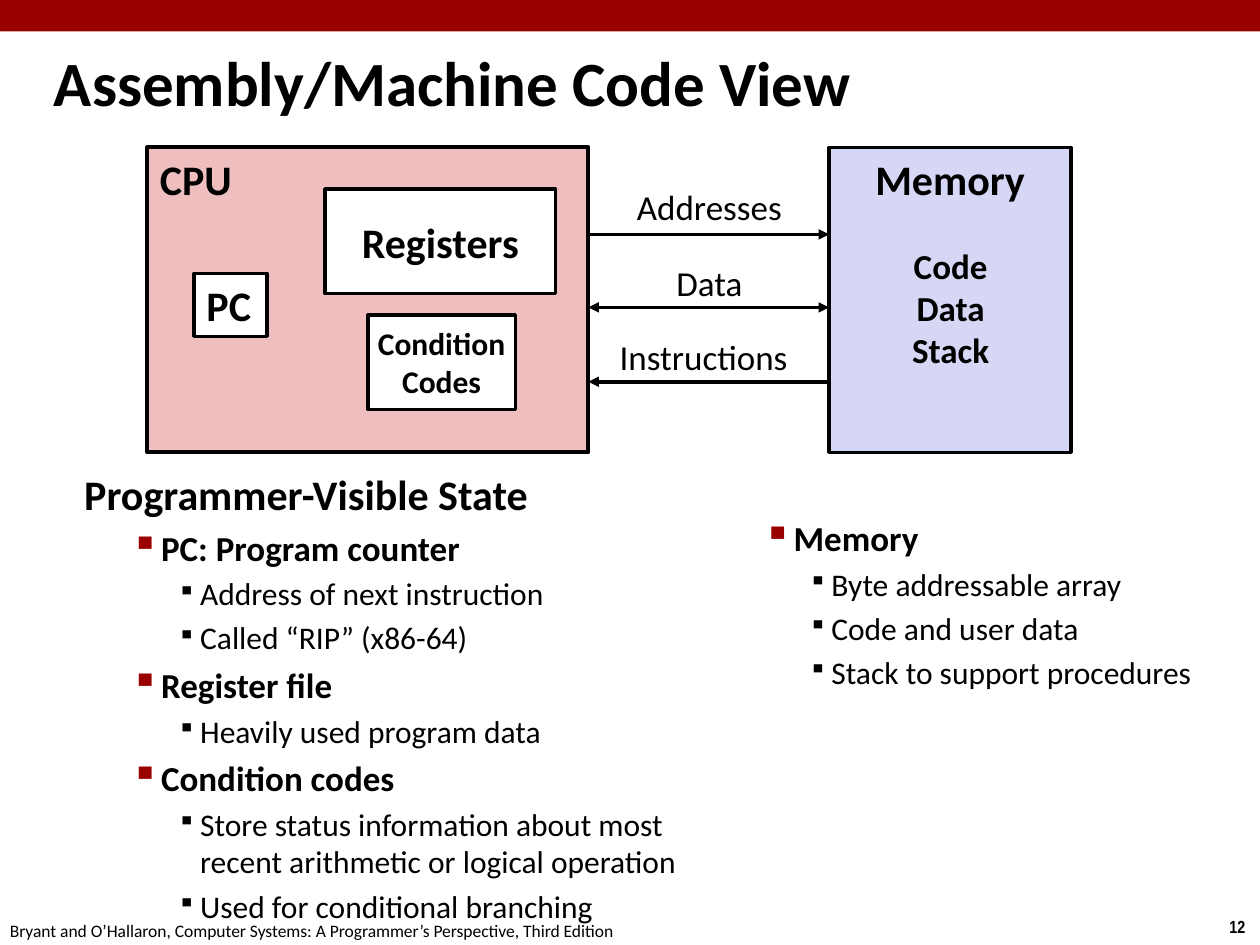
from dataclasses import dataclass
from typing import Optional

from lxml import etree
from pptx import Presentation
from pptx import util as u
from pptx.dml.color import RGBColor
from pptx.enum import shapes, text
from pptx.oxml import ns

BLACK, WHITE, RED = "000000", "FFFFFF", "990000"
LEFT, CENTER = text.PP_ALIGN.LEFT, text.PP_ALIGN.CENTER
TOP, MIDDLE = text.MSO_ANCHOR.TOP, text.MSO_ANCHOR.MIDDLE


@dataclass(frozen=True)
class Label:
    lines: tuple[str, ...]
    size: float
    bold: bool = False
    align: text.PP_ALIGN = CENTER
    anchor: text.MSO_ANCHOR = TOP
    wrap: bool = True
    font: str = "Calibri"


@dataclass(frozen=True)
class Block:
    place: tuple[float, float, float, float]
    label: Optional[Label] = None
    fill: Optional[str] = None
    line_width: float = 0


@dataclass(frozen=True)
class Signal:
    name: str
    y: float
    label_top: float
    label_width: float
    to_cpu: bool
    to_memory: bool


@dataclass(frozen=True)
class Level:
    size: float
    bold: bool
    hanging: float
    bullet_percent: int = 0
    bullet_color: str = BLACK


@dataclass(frozen=True)
class Outline:
    place: tuple[float, float, float, float]
    indents: tuple[float, float, float]
    items: tuple[tuple[int, str], ...]


LEVELS = (
    Level(24, True, 0.25),
    Level(20, True, 0.24, 110, RED),
    Level(18, False, 0.18, 80),
)
BLOCKS = (
    Block((0, 0, 10, 0.25), fill=RED),
    Block((9.66, 7.22, 0.34, 0.27), Label(("12",), 10, True, LEFT, wrap=False, font="Arial Narrow")),
    Block((-0.02, 7.25, 5.08, 0.27), Label(
        ("Bryant and O’Hallaron, Computer Systems: A Programmer’s Perspective, Third Edition",),
        10, align=LEFT, wrap=False)),
    Block((0.33, 0.33, 7.9, 0.63), Label(("Assembly/Machine Code View",), 36, True, LEFT, MIDDLE)),
    Block((1.17, 1.17, 3.5, 2.42), Label(("CPU",), 24, True, LEFT), "EFBFBF", 2.25),
    Block((1.54, 2.17, 0.58, 0.5), Label(("PC",), 24, True, LEFT, MIDDLE, False), WHITE, 2),
    Block((2.58, 1.5, 1.83, 0.83), Label(("Registers",), 24, True, CENTER, MIDDLE, False), WHITE, 2),
    Block((2.92, 2.5, 1.17, 0.75), Label(("Condition", "Codes"), 18, True, CENTER, MIDDLE, False), WHITE, 2),
    Block((6.58, 1.17, 1.92, 2.42), Label(("Memory",), 24, True, wrap=False), "D6D6F5", 2),
    Block((6.92, 1.89, 1.25, 1.11), Label(("Code", "Data", "Stack"), 20, True)),
)
SIGNALS = (
    Signal("Addresses", 1.86, 1.42, 1.92, False, True),
    Signal("Data", 2.44, 2.03, 1.92, True, True),
    Signal("Instructions", 3.03, 2.61, 1.83, True, False),
)
OUTLINES = (
    Outline((0.57, 3.67, 5.31, 3.38), (0.25, 0.61, 0.92), (
        (0, "Programmer-Visible State"),
        (1, "PC: Program counter"),
        (2, "Address of next instruction"),
        (2, "Called “RIP” (x86-64)"),
        (1, "Register file"),
        (2, "Heavily used program data"),
        (1, "Condition codes"),
        (2, "Store status information about most recent arithmetic or logical operation"),
        (2, "Used for conditional branching"),
    )),
    Outline((5.88, 4.05, 3.96, 1.72), (0.25, 0.32, 0.62), (
        (1, "Memory"),
        (2, "Byte addressable array"),
        (2, "Code and user data"),
        (2, "Stack to support procedures"),
    )),
)


def color(value: str) -> RGBColor:
    return RGBColor.from_string(value)


def set_all(target, values: dict) -> None:
    for name, value in values.items():
        setattr(target, name, value)


def add_span(para, words: str, size: float, bold: bool, font: str = "Calibri") -> None:
    span = para.add_run()
    span.text = words
    set_all(span.font, {"size": u.Pt(size), "bold": bold, "name": font})
    span.font.color.rgb = color(BLACK)


def next_para(frame, index: int):
    return frame.add_paragraph() if index else frame.paragraphs[0]


def add_block(page, block: Block):
    place = [u.Inches(length) for length in block.place]
    if block.fill:
        box = page.shapes.add_shape(shapes.MSO_SHAPE.RECTANGLE, *place)
        box.shadow.inherit = False
        box.fill.solid()
        box.fill.fore_color.rgb = color(block.fill)
        if block.line_width:
            box.line.color.rgb = color(BLACK)
            box.line.width = u.Pt(block.line_width)
        else:
            box.line.fill.background()
    else:
        box = page.shapes.add_textbox(*place)
    label = block.label
    if label:
        set_all(box.text_frame, {"word_wrap": label.wrap, "vertical_anchor": label.anchor})
        for index, words in enumerate(label.lines):
            para = next_para(box.text_frame, index)
            para.alignment = label.align
            add_span(para, words, label.size, label.bold, label.font)
    return box


def add_signal(page, signal: Signal) -> None:
    cpu_edge, memory_edge = 4.67, 6.58
    ends = [u.Inches(length) for length in (cpu_edge, signal.y, memory_edge, signal.y)]
    arrow = page.shapes.add_connector(shapes.MSO_CONNECTOR.STRAIGHT, *ends)
    arrow.line.color.rgb = color(BLACK)
    arrow.line.width = u.Pt(2)
    line = arrow.line._get_or_add_ln()
    for tag, shown in (("a:headEnd", signal.to_cpu), ("a:tailEnd", signal.to_memory)):
        if shown:
            etree.SubElement(line, ns.qn(tag), type="triangle")
    etree.SubElement(arrow._element.spPr, ns.qn("a:effectLst"))
    place = (cpu_edge, signal.label_top, signal.label_width, 0.43)
    add_block(page, Block(place, Label((signal.name,), 20)))


def add_bullet(properties, level: Level) -> None:
    tint = etree.SubElement(properties, ns.qn("a:buClr"))
    etree.SubElement(tint, ns.qn("a:srgbClr"), val=level.bullet_color)
    etree.SubElement(properties, ns.qn("a:buSzPct"), val=str(level.bullet_percent * 1000))
    etree.SubElement(properties, ns.qn("a:buChar"), char="▪")


def add_outline(page, outline: Outline) -> None:
    box = add_block(page, Block(outline.place))
    box.text_frame.word_wrap = True
    for index, (depth, words) in enumerate(outline.items):
        level = LEVELS[depth]
        para = next_para(box.text_frame, index)
        set_all(para, {"level": depth, "space_before": u.Pt(level.size * 0.2)})
        properties = para._p.get_or_add_pPr()
        properties.set("marL", str(u.Inches(outline.indents[depth])))
        properties.set("indent", str(-u.Inches(level.hanging)))
        if level.bullet_percent:
            add_bullet(properties, level)
        add_span(para, words, level.size, level.bold)


def main() -> None:
    """Build the slide on the assembly and machine code view."""
    deck = Presentation()
    set_all(deck, {"slide_width": u.Inches(10), "slide_height": u.Inches(7.5)})
    page = deck.slides.add_slide(deck.slide_layouts[6])
    for draw, parts in ((add_block, BLOCKS), (add_signal, SIGNALS), (add_outline, OUTLINES)):
        for part in parts:
            draw(page, part)
    deck.save("out.pptx")


if __name__ == "__main__":
    main()
